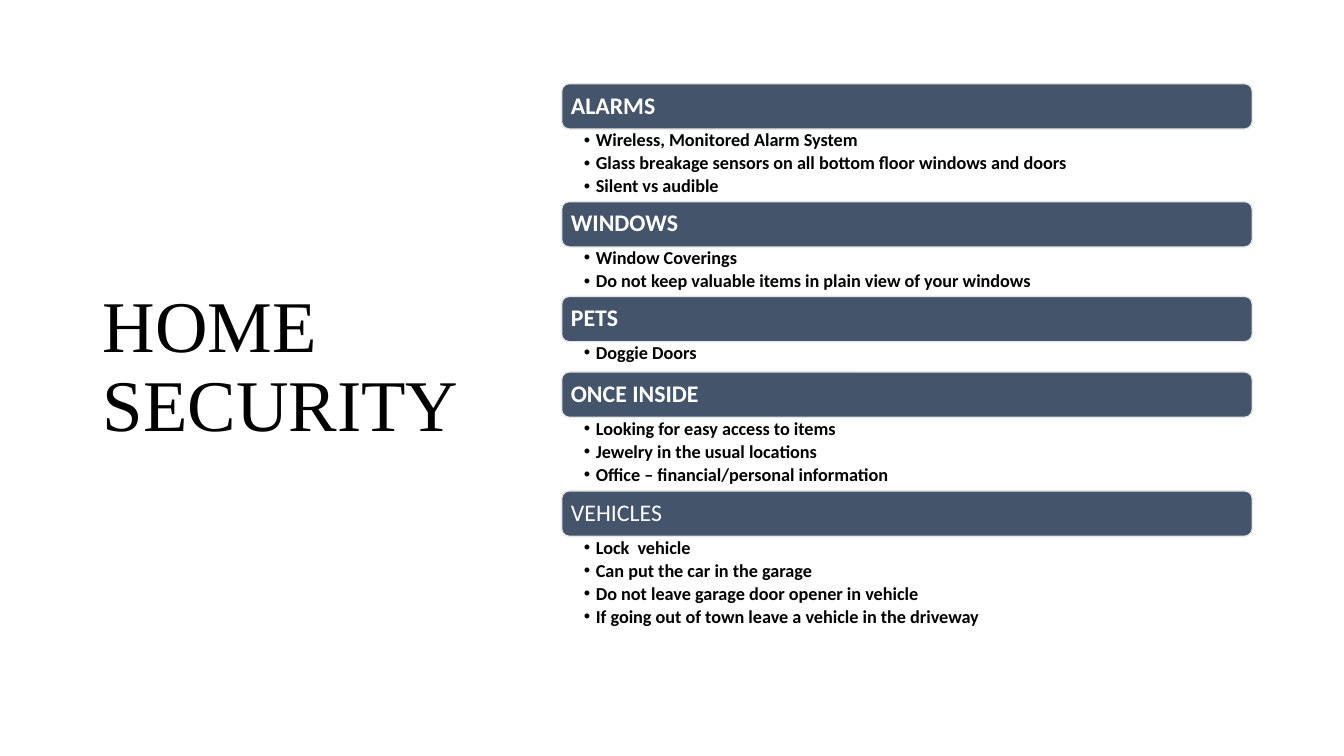
"""Build the Home Security slide with its stack of headed bullet lists."""
from lxml.etree import SubElement
from pptx import Presentation
from pptx.dml.color import RGBColor
from pptx.enum.shapes import MSO_SHAPE as SHAPE
from pptx.enum.text import MSO_ANCHOR as ANCHOR, PP_ALIGN as ALIGN
from pptx.oxml.ns import qn
from pptx.util import Pt

PX = 9144
BLACK = RGBColor(0x00, 0x00, 0x00)
WHITE = RGBColor(0xFF, 0xFF, 0xFF)
SLATE = RGBColor(0x44, 0x54, 0x6A)
PALE = RGBColor(0xE7, 0xE6, 0xE6)

LIST_X, LIST_Y, LIST_W, BAR_H = 557, 83, 685, 45
SECTIONS = [
    ("ALARMS", True, 72, [
        "Wireless, Monitored Alarm System",
        "Glass breakage sensors on all bottom floor windows and doors",
        "Silent vs audible"]),
    ("WINDOWS", True, 49, [
        "Window Coverings",
        "Do not keep valuable items in plain view of your windows"]),
    ("PETS", True, 30, ["Doggie Doors"]),
    ("ONCE INSIDE", True, 73, [
        "Looking for easy access to items",
        "Jewelry in the usual locations",
        "Office – financial/personal information"]),
    ("VEHICLES", False, 123, [
        "Lock  vehicle",
        "Can put the car in the garage",
        "Do not leave garage door opener in vehicle",
        "If going out of town leave a vehicle in the driveway"]),
]


def box(x, y, w, h):
    """Turn px lengths into EMU."""
    return [v * PX for v in (x, y, w, h)]


def set_frame(tf, anchor, *margins):
    """Set wrapping, anchor and the left, top, right and bottom margins."""
    tf.word_wrap = True
    tf.vertical_anchor = anchor
    tf.margin_left, tf.margin_top, tf.margin_right, tf.margin_bottom = [
        m * PX for m in margins]


def style(p, size, color, bold=False, font="Calibri"):
    """Format a paragraph and its runs."""
    p.alignment = ALIGN.LEFT
    p.line_spacing = 0.9
    for r in p.runs:
        r.font.name, r.font.size, r.font.bold = font, Pt(size), bold
        r.font.color.rgb = color


def add_bullet(p, indent):
    """Give a paragraph a hanging round bullet."""
    pPr = p._p.get_or_add_pPr()
    pPr.set("marL", str(indent * PX))
    pPr.set("indent", str(-indent * PX))
    SubElement(pPr, qn("a:buFont")).set("typeface", "Arial")
    SubElement(pPr, qn("a:buChar")).set("char", "•")


def add_title(s, text):
    """Place and format the title placeholder."""
    title = s.shapes.title
    title.left, title.top, title.width, title.height = box(92, 61, 386, 609)
    tf = title.text_frame
    tf.text = text
    set_frame(tf, ANCHOR.MIDDLE, 10, 5, 10, 5)
    style(tf.paragraphs[0], 52, BLACK, font="Times New Roman")


def add_bar(s, y, text, bold):
    """Add a rounded heading bar."""
    sp = s.shapes.add_shape(SHAPE.ROUNDED_RECTANGLE, *box(LIST_X, y, LIST_W, BAR_H))
    sp.shadow.inherit = False
    sp.fill.solid()
    sp.fill.fore_color.rgb = SLATE
    sp.line.color.rgb = PALE
    sp.line.width = Pt(1)
    tf = sp.text_frame
    tf.text = text
    set_frame(tf, ANCHOR.MIDDLE, 7, 7, 7, 7)
    style(tf.paragraphs[0], 17, WHITE, bold)


def add_bullets(s, y, h, items):
    """Add the bullet list under a heading bar."""
    tf = s.shapes.add_textbox(*box(LIST_X, y, LIST_W, h)).text_frame
    tf.text = "\n".join(items)
    set_frame(tf, ANCHOR.TOP, 22, 2, 13, 2)
    for p in tf.paragraphs:
        p.level = 1
        style(p, 13, BLACK, True)
        p.space_after = Pt(2.4)
        add_bullet(p, 12)


def main():
    """Build and save the slide."""
    prs = Presentation()
    prs.slide_width, prs.slide_height = 1333 * PX, 750 * PX
    s = prs.slides.add_slide(prs.slide_layouts[5])
    add_title(s, "HOME SECURITY")
    y = LIST_Y
    for heading, bold, h, items in SECTIONS:
        add_bar(s, y, heading, bold)
        add_bullets(s, y + BAR_H, h, items)
        y += BAR_H + h
    prs.save("out.pptx")


if __name__ == "__main__":
    main()
